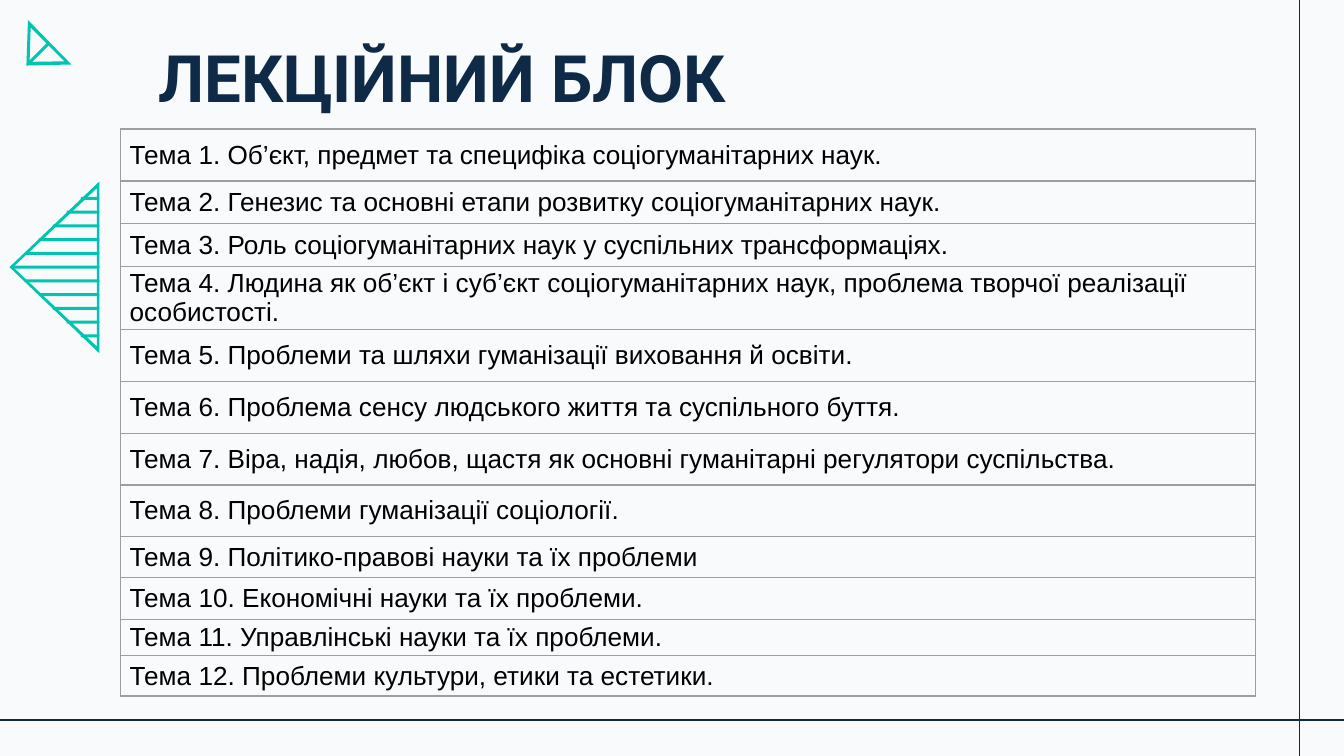
import pptx
import pptx.dml.color
import pptx.enum.shapes
import pptx.enum.text
import pptx.oxml
import pptx.oxml.ns
import pptx.util
from dataclasses import dataclass
from pptx.util import Cm

TITLE = "ЛЕКЦІЙНИЙ БЛОК"
LEFT, JUSTIFY = pptx.enum.text.PP_ALIGN.LEFT, pptx.enum.text.PP_ALIGN.JUSTIFY
# topic, row height in cm, alignment
TOPICS = [
    ("Об’єкт, предмет та специфіка соціогуманітарних наук.", 0.98, LEFT),
    ("Генезис та основні етапи розвитку соціогуманітарних наук.", 0.81, JUSTIFY),
    ("Роль соціогуманітарних наук у суспільних трансформаціях.", 0.81, JUSTIFY),
    ("Людина як об’єкт і суб’єкт соціогуманітарних наук, "
     "проблема творчої реалізації особистості.", 1.11, LEFT),
    ("Проблеми та шляхи гуманізації виховання й освіти.", 0.98, JUSTIFY),
    ("Проблема сенсу людського життя та суспільного буття.", 0.98, JUSTIFY),
    ("Віра, надія, любов, щастя як основні гуманітарні регулятори суспільства.",
     0.98, JUSTIFY),
    ("Проблеми гуманізації соціології.", 0.98, JUSTIFY),
    ("Політико-правові науки та їх проблеми", 0.77, JUSTIFY),
    ("Економічні науки та їх проблеми.", 0.79, JUSTIFY),
    ("Управлінські науки та їх проблеми.", 0.69, JUSTIFY),
    ("Проблеми культури, етики та естетики.", 0.76, JUSTIFY),
]

# Contours in cm: outer edge, then the hole
SMALL_TRIANGLE = [
    [(0.53, 0.38), (0.5, 1.24), (1.35, 1.22)],
    [(0.58, 0.52), (1.22, 1.16), (0.56, 1.17)],
]
LARGE_TRIANGLE = [
    [(1.88, 3.43), (0.18, 5.05), (1.88, 6.68)],
    [(1.83, 3.56), (1.83, 6.55), (0.25, 5.05)],
]


@dataclass(frozen=True)
class Theme:
    background: str = "F8FAFB"
    navy: str = "0E2A47"
    teal: str = "00C3B1"
    text: str = "000000"
    border: str = "9E9E9E"
    title_font: str = "Roboto"
    body_font: str = "Arial"
    title_size: int = 35
    body_size: int = 14
    thin: float = 0.75
    stroke: float = 1.6


THEME = Theme()


def rgb(value):
    return pptx.dml.color.RGBColor.from_string(value)


def style_font(p, name, size, color, bold=False):
    p.font.name, p.font.size, p.font.bold = name, pptx.util.Pt(size), bold
    p.font.color.rgb = rgb(color)


def fill_teal(sp):
    sp.shadow.inherit = False
    sp.fill.solid()
    sp.fill.fore_color.rgb = rgb(THEME.teal)
    sp.line.fill.background()


def add_line(s, start, end, color, width):
    line = s.shapes.add_connector(
        pptx.enum.shapes.MSO_CONNECTOR.STRAIGHT, *start, *end)
    line.line.color.rgb = rgb(color)
    line.line.width = pptx.util.Pt(width)
    line._element.spPr.append(pptx.oxml.parse_xml(
        f"<a:effectLst {pptx.oxml.ns.nsdecls('a')}/>"))


def add_outline(s, contours):
    """Fill the area between the outer contour and its hole."""
    outer, hole = [[(Cm(x), Cm(y)) for x, y in c] for c in contours]
    builder = s.shapes.build_freeform(*outer[0])
    builder.add_line_segments(outer[1:], close=True)
    builder.move_to(*hole[0])
    builder.add_line_segments(hole[1:], close=True)
    fill_teal(builder.convert_to_shape())


def add_stripes(s):
    """Stripes shorten evenly above and below the middle of the triangle."""
    middle, right, step, thickness = 5.05, 1.88, 0.26, 0.06
    for k in range(-5, 6):
        left = 0.2 + 0.265 * abs(k)
        sp = s.shapes.add_shape(
            pptx.enum.shapes.MSO_SHAPE.ROUNDED_RECTANGLE, Cm(left),
            Cm(middle + k * step - thickness / 2), Cm(right - left), Cm(thickness))
        sp.adjustments[0] = 0.5
        fill_teal(sp)


def add_title(s):
    tf = s.shapes.add_textbox(Cm(2.74), Cm(0.64), Cm(12.75), Cm(1.8)).text_frame
    tf.word_wrap = True
    tf.vertical_anchor = pptx.enum.text.MSO_ANCHOR.BOTTOM
    tf.margin_left = tf.margin_right = tf.margin_top = tf.margin_bottom = Cm(0.25)
    p = tf.paragraphs[0]
    p.text = TITLE
    style_font(p, THEME.title_font, THEME.title_size, THEME.navy, bold=True)


def set_borders(cell):
    tc_pr = cell._tc.get_or_add_tcPr()
    for i, side in enumerate(("lnL", "lnR", "lnT", "lnB")):
        tc_pr.insert(i, pptx.oxml.parse_xml(
            f'<a:{side} {pptx.oxml.ns.nsdecls("a")} w="{pptx.util.Pt(THEME.thin)}">'
            f'<a:solidFill><a:srgbClr val="{THEME.border}"/></a:solidFill></a:{side}>'))


def add_topics(s):
    total = sum(height for _, height, _ in TOPICS)
    table = s.shapes.add_table(
        len(TOPICS), 1, Cm(2.27), Cm(2.44), Cm(21.46), Cm(total)).table
    table.first_row = table.horz_banding = False
    for i, (topic, height, alignment) in enumerate(TOPICS):
        table.rows[i].height = Cm(height)
        cell = table.cell(i, 0)
        cell.fill.background()
        cell.margin_left = cell.margin_right = Cm(0.18)
        cell.margin_top = cell.margin_bottom = 0
        cell.vertical_anchor = pptx.enum.text.MSO_ANCHOR.MIDDLE
        p = cell.text_frame.paragraphs[0]
        p.text = f"Тема {i + 1}. {topic}"
        p.alignment = alignment
        style_font(p, THEME.body_font, THEME.body_size, THEME.text)
        set_borders(cell)


def main():
    prs = pptx.Presentation()
    prs.slide_width, prs.slide_height = Cm(25.4), Cm(14.29)
    s = prs.slides.add_slide(prs.slide_layouts[6])
    s.background.fill.solid()
    s.background.fill.fore_color.rgb = rgb(THEME.background)

    rule_x, rule_y = Cm(24.56), Cm(13.61)
    add_line(s, (0, rule_y), (prs.slide_width, rule_y), THEME.navy, THEME.thin)
    add_line(s, (rule_x, 0), (rule_x, prs.slide_height), THEME.navy, THEME.thin)
    add_outline(s, SMALL_TRIANGLE)
    add_line(s, (Cm(0.53), Cm(1.21)), (Cm(0.92), Cm(0.82)), THEME.teal, THEME.stroke)
    add_title(s)
    add_outline(s, LARGE_TRIANGLE)
    add_stripes(s)
    add_topics(s)
    prs.save("out.pptx")


if __name__ == "__main__":
    main()
